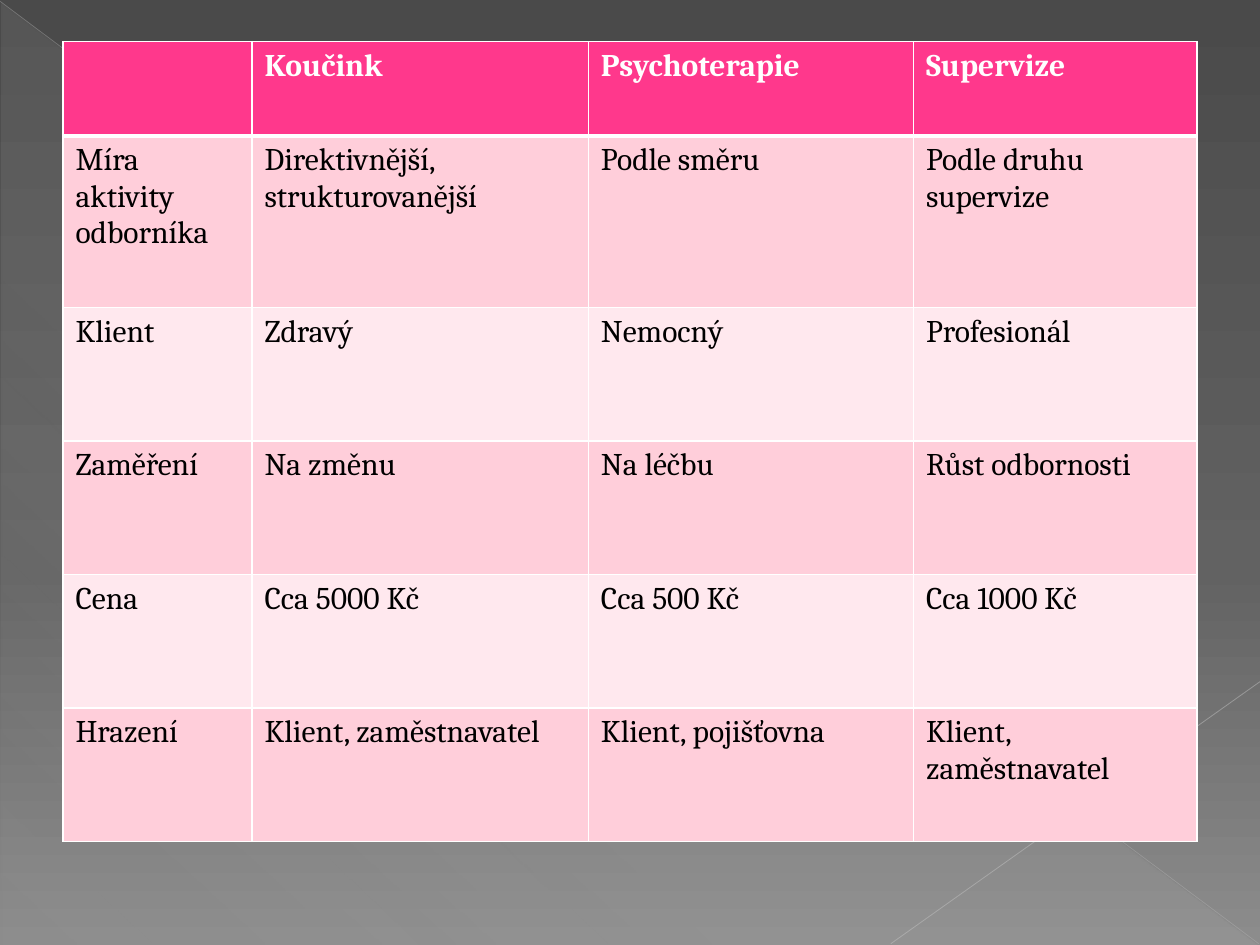
from dataclasses import dataclass

import lxml.etree
import pptx
import pptx.dml.color
import pptx.enum.shapes
import pptx.oxml.ns
import pptx.util

qn = pptx.oxml.ns.qn
Inches = pptx.util.Inches


@dataclass(frozen=True)
class Theme:
    font: str = "Cambria"
    text_size: int = 18
    header_text: str = "FFFFFF"
    body_text: str = "000000"
    header_fill: str = "FF388C"
    band_fills: tuple[str, str] = ("FFCEDA", "FFE8EE")
    border: str = "FFFFFF"
    border_width: float = 1
    header_rule_width: float = 3


@dataclass(frozen=True)
class Stop:
    position: int
    color: str
    opacity: int = 100


@dataclass(frozen=True)
class Ray:
    start: tuple[float, float]
    end: tuple[float, float]
    color: str
    width: float
    opacity: int


THEME = Theme()
BACKGROUND = (Stop(0, "4A4A4A"), Stop(60, "626262"), Stop(100, "8C8C8C"))
SHEEN = (Stop(0, "D2D2D2", 10), Stop(70, "D2D2D2", 8), Stop(100, "D2D2D2", 1))
RAYS = (
    Ray((0, 0.01), (9.99, 7.49), "BFBFBF", 0.39, 35),
    Ray((10, 5.41), (7.07, 7.49), "C6C6C6", 0.47, 45),
)
COLUMN_WIDTHS = (1.5, 2.67, 2.58, 2.25)
ROW_HEIGHTS = (0.75, 1.36, 1.06, 1.06, 1.06, 1.06)
COMPARISON = (
    ("", "Koučink", "Psychoterapie", "Supervize"),
    ("Míra aktivity odborníka", "Direktivnější, strukturovanější", "Podle směru", "Podle druhu supervize"),
    ("Klient", "Zdravý", "Nemocný", "Profesionál"),
    ("Zaměření", "Na změnu", "Na léčbu", "Růst odbornosti"),
    ("Cena", "Cca 5000 Kč", "Cca 500 Kč", "Cca 1000 Kč"),
    ("Hrazení", "Klient, zaměstnavatel", "Klient, pojišťovna", "Klient, zaměstnavatel"),
)


def rgb(color: str) -> pptx.dml.color.RGBColor:
    return pptx.dml.color.RGBColor.from_string(color)


def add_color(parent, color: str, opacity: int = 100) -> None:
    element = lxml.etree.SubElement(parent, qn("a:srgbClr"), val=color)
    if opacity < 100:
        lxml.etree.SubElement(element, qn("a:alpha"), val=str(opacity * 1000))


def set_gradient(fill, owner, stops: tuple[Stop, ...], clockwise_angle: int) -> None:
    fill.gradient()
    fill.gradient_angle = 360 - clockwise_angle
    stop_list = next(owner.iter(qn("a:gsLst")))
    for old_stop in list(stop_list):
        stop_list.remove(old_stop)
    for stop in stops:
        element = lxml.etree.SubElement(stop_list, qn("a:gs"), pos=str(stop.position * 1000))
        add_color(element, stop.color, stop.opacity)


def add_sheen(slide) -> None:
    shape = slide.shapes.add_shape(
        pptx.enum.shapes.MSO_SHAPE.RIGHT_TRIANGLE,
        Inches(0.01), Inches(0.02), Inches(9.98), Inches(7.48),
    )
    shape.shadow.inherit = False
    shape.line.fill.background()
    set_gradient(shape.fill, shape.element, SHEEN, 133)


def add_ray(slide, ray: Ray) -> None:
    connector = slide.shapes.add_connector(
        pptx.enum.shapes.MSO_CONNECTOR.STRAIGHT,
        *(Inches(value) for value in ray.start + ray.end),
    )
    connector.line.width = pptx.util.Pt(ray.width)
    connector.line.color.rgb = rgb(ray.color)
    solid_fill = next(connector.element.iter(qn("a:solidFill")))
    solid_fill.clear()
    add_color(solid_fill, ray.color, ray.opacity)
    lxml.etree.SubElement(connector.element.spPr, qn("a:effectLst"))


def write_text(text_frame, text: str, *, color: str, bold: bool = False) -> None:
    paragraph = text_frame.paragraphs[0]
    paragraph.font.size = pptx.util.Pt(THEME.text_size)
    if text:
        run = paragraph.add_run()
        run.text = text
        run.font.name = THEME.font
        run.font.size = pptx.util.Pt(THEME.text_size)
        run.font.bold = bold
        run.font.color.rgb = rgb(color)


def set_borders(cell, *, top: float, bottom: float) -> None:
    properties = cell._tc.get_or_add_tcPr()
    widths = {"L": THEME.border_width, "R": THEME.border_width, "T": top, "B": bottom}
    for side, width in widths.items():
        line = lxml.etree.SubElement(properties, qn(f"a:ln{side}"), w=str(pptx.util.Pt(width)))
        add_color(lxml.etree.SubElement(line, qn("a:solidFill")), THEME.border)


def add_comparison_table(slide) -> None:
    table = slide.shapes.add_table(
        len(ROW_HEIGHTS), len(COLUMN_WIDTHS), Inches(0.5), Inches(0.33),
        Inches(sum(COLUMN_WIDTHS)), Inches(sum(ROW_HEIGHTS)),
    ).table
    for column, width in zip(table.columns, COLUMN_WIDTHS):
        column.width = Inches(width)
    for row_index, (row, height, texts) in enumerate(zip(table.rows, ROW_HEIGHTS, COMPARISON)):
        row.height = Inches(height)
        is_header = row_index == 0
        fill = THEME.header_fill if is_header else THEME.band_fills[(row_index - 1) % 2]
        color = THEME.header_text if is_header else THEME.body_text
        top = THEME.header_rule_width if row_index == 1 else THEME.border_width
        bottom = THEME.header_rule_width if is_header else THEME.border_width
        for cell, text in zip(row.cells, texts):
            set_borders(cell, top=top, bottom=bottom)
            cell.fill.solid()
            cell.fill.fore_color.rgb = rgb(fill)
            write_text(cell.text_frame, text, color=color, bold=is_header)


def main() -> None:
    presentation = pptx.Presentation()
    presentation.slide_width = Inches(10)
    presentation.slide_height = Inches(7.5)
    slide = presentation.slides.add_slide(presentation.slide_layouts[6])
    set_gradient(slide.background.fill, slide.element, BACKGROUND, 90)
    add_sheen(slide)
    for ray in RAYS:
        add_ray(slide, ray)
    add_comparison_table(slide)
    presentation.save("out.pptx")


if __name__ == "__main__":
    main()
